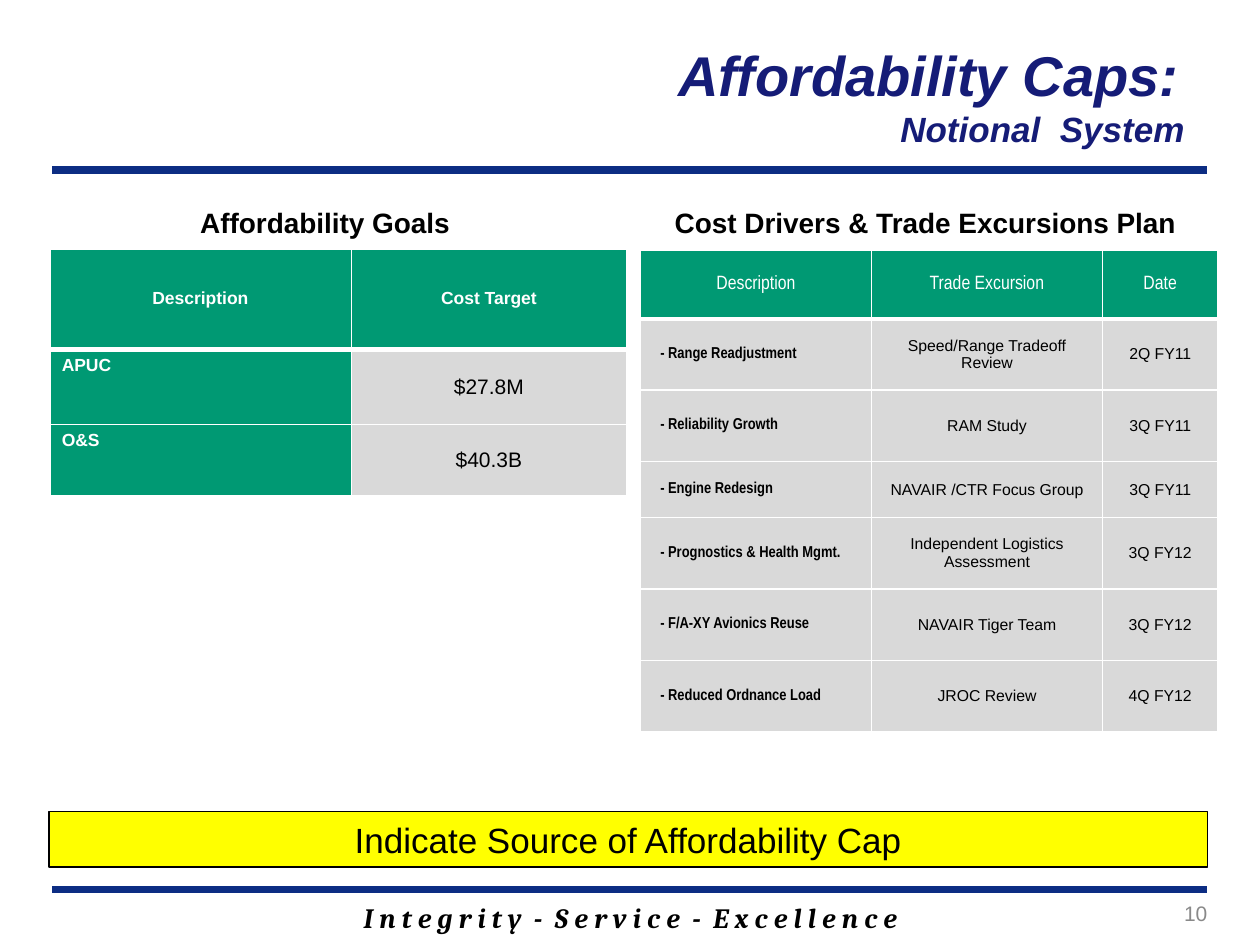
import pptx
import pptx.util
import pptx.dml.color
import pptx.enum.shapes
import pptx.enum.text
import pptx.oxml
import pptx.oxml.ns
import lxml.etree

Pt = pptx.util.Pt
RGBColor = pptx.dml.color.RGBColor
ALIGN = pptx.enum.text.PP_ALIGN
ANCHOR = pptx.enum.text.MSO_ANCHOR

NAVY = RGBColor(0x15, 0x1C, 0x77)
RULE_BLUE = RGBColor(0x0C, 0x2D, 0x83)
GREEN = RGBColor(0x00, 0x99, 0x73)
LIGHT_GREY = RGBColor(0xD9, 0xD9, 0xD9)
NUMBER_GREY = RGBColor(0x89, 0x89, 0x89)
YELLOW = RGBColor(0xFF, 0xFF, 0x00)
BLACK = RGBColor(0, 0, 0)
WHITE = RGBColor(0xFF, 0xFF, 0xFF)


def write(frame, text, size, color=BLACK, align=ALIGN.CENTER, font="Arial", bold=False, italic=False):
    frame.text = text
    frame.word_wrap = True
    para = frame.paragraphs[0]
    para.alignment = align
    for span in para.runs:
        span.font.name = font
        span.font.size = Pt(size)
        span.font.bold = bold
        span.font.italic = italic
        span.font.color.rgb = color


def paint_cell(cell, color, left=1, right=1, top=1, bottom=1):
    properties = cell._tc.get_or_add_tcPr()
    for side, width in (("L", left), ("R", right), ("T", top), ("B", bottom)):
        properties.append(pptx.oxml.parse_xml(
            f'<a:ln{side} {pptx.oxml.ns.nsdecls("a")} w="{Pt(width)}">'
            f'<a:solidFill><a:srgbClr val="{WHITE}"/></a:solidFill></a:ln{side}>'))
    cell.fill.solid()
    cell.fill.fore_color.rgb = color


deck = pptx.Presentation()
deck.slide_width, deck.slide_height = Pt(720), Pt(540)
page = deck.slides.add_slide(deck.slide_layouts[5])

# Title with subtitle line
title = page.shapes.title
title.left, title.top, title.width, title.height = Pt(46.8), Pt(19.4), Pt(643), Pt(70.6)
title.text_frame.text = "Affordability Caps: \nNotional  System "
title.text_frame.auto_size = pptx.enum.text.MSO_AUTO_SIZE.NONE
title.text_frame.vertical_anchor = ANCHOR.TOP
for para, size in zip(title.text_frame.paragraphs, (32, 20)):
    para.alignment = ALIGN.RIGHT
    span = para.runs[0]
    span.font.name = "Arial"
    span.font.size = Pt(size)
    span.font.bold = span.font.italic = True
    span.font.color.rgb = NAVY

# Rules below the title and above the footer
for y in (97.2, 508.3):
    rule = page.shapes.add_connector(
        pptx.enum.shapes.MSO_CONNECTOR.STRAIGHT, Pt(30), Pt(y), Pt(690), Pt(y))
    rule.line.color.rgb = RULE_BLUE
    rule.line.width = Pt(4.5)
    lxml.etree.SubElement(rule._element.spPr, pptx.oxml.ns.qn("a:effectLst"))

# Table headings (sized so each stays on one line), footer motto and page number
bold = {"bold": True}
motto = {"font": "Cambria", "bold": True, "italic": True}
number = {"color": NUMBER_GREY, "align": ALIGN.RIGHT}
for text, left, top, width, height, size, style in (
    ("Affordability Goals", 59.8, 114, 252, 27, 16, bold),
    ("Cost Drivers & Trade Excursions Plan", 367.9, 114, 321.8, 27, 16, bold),
    ("I n t e g r i t y  -  S e r v i c e  -  E x c e l l e n c e", 102.2, 511.2, 516.2, 26.6, 16, motto),
    ("10", 529.2, 511.2, 167.8, 28.8, 12, number),
):
    box = page.shapes.add_textbox(Pt(left), Pt(top), Pt(width), Pt(height))
    write(box.text_frame, text, size, **style)

# Affordability goals table
goals = (("Description", "Cost Target"), ("APUC", "$27.8M"), ("O&S", "$40.3B"))
goal_table = page.shapes.add_table(3, 2, Pt(28.1), Pt(141.8), Pt(329.8), Pt(141.4)).table
for column, width in zip(goal_table.columns, (172.8, 157)):
    column.width = Pt(width)
for row, height in zip(goal_table.rows, (58, 42.8, 40.6)):
    row.height = Pt(height)
for r, values in enumerate(goals):
    for c, text in enumerate(values):
        cell = goal_table.cell(r, c)
        is_value = r > 0 and c == 1
        is_row_label = r > 0 and c == 0
        paint_cell(cell, LIGHT_GREY if is_value else GREEN,
                   left=1 if c else 3, top=1 if r == 2 else 3, bottom=1 if r else 3)
        cell.vertical_anchor = ANCHOR.TOP if is_row_label else ANCHOR.MIDDLE
        write(cell.text_frame, text, 12 if is_value else 10,
              color=BLACK if is_value else WHITE,
              align=ALIGN.LEFT if is_row_label else ALIGN.CENTER, bold=not is_value)

# Cost drivers and trade excursions table
drivers = (
    ("Description", "Trade Excursion", "Date"),
    ("- Range Readjustment", "Speed/Range Tradeoff Review", "2Q FY11"),
    ("- Reliability Growth", "RAM Study", "3Q FY11"),
    ("- Engine Redesign", "NAVAIR /CTR Focus Group", "3Q FY11"),
    ("- Prognostics & Health Mgmt.", "Independent Logistics Assessment", "3Q FY12"),
    ("- F/A-XY Avionics Reuse", "NAVAIR Tiger Team", "3Q FY12"),
    ("- Reduced Ordnance Load", "JROC Review", "4Q FY12"),
)
driver_table = page.shapes.add_table(7, 3, Pt(366), Pt(142.8), Pt(330), Pt(275.8)).table
for column, width in zip(driver_table.columns, (132, 132, 66)):
    column.width = Pt(width)
for row, height in zip(driver_table.rows, (39.4, 40.8, 40.8, 32, 40.8, 40.8, 40.8)):
    row.height = Pt(height)
for r, values in enumerate(drivers):
    for c, text in enumerate(values):
        cell = driver_table.cell(r, c)
        is_header = r == 0
        is_driver = r > 0 and c == 0
        paint_cell(cell, GREEN if is_header else LIGHT_GREY, bottom=3 if is_header else 1)
        cell.vertical_anchor = ANCHOR.MIDDLE
        if is_driver:
            cell.margin_left = Pt(11.3)
        write(cell.text_frame, text, 11 if is_header else 9,
              color=WHITE if is_header else BLACK,
              align=ALIGN.LEFT if is_driver else ALIGN.CENTER,
              font="Arial Narrow" if is_header or is_driver else "Arial", bold=is_driver)

# Yellow source banner
banner = page.shapes.add_shape(
    pptx.enum.shapes.MSO_SHAPE.RECTANGLE, Pt(28), Pt(463.9), Pt(662), Pt(31.5))
banner.shadow.inherit = False
banner.fill.solid()
banner.fill.fore_color.rgb = YELLOW
banner.line.color.rgb = BLACK
banner.line.width = Pt(0.75)
banner.text_frame.vertical_anchor = ANCHOR.MIDDLE
write(banner.text_frame, "Indicate Source of Affordability Cap", 20)

deck.save("out.pptx")
